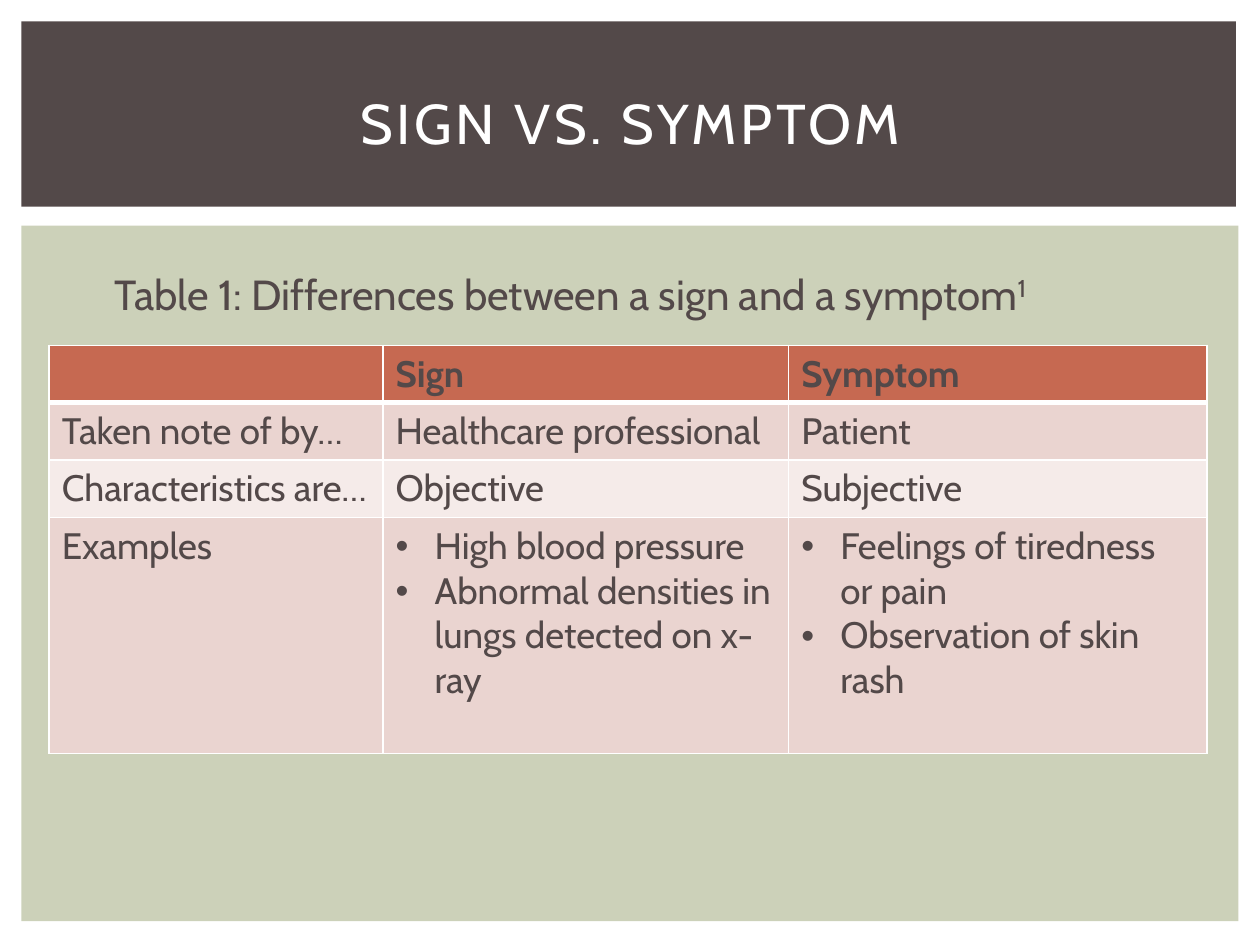
from collections import namedtuple

from lxml.etree import SubElement
from pptx import Presentation
from pptx.dml.color import RGBColor
from pptx.enum.shapes import MSO_SHAPE as Shape
from pptx.enum.text import MSO_ANCHOR as Anchor, PP_ALIGN as Align
from pptx.oxml import parse_xml
from pptx.oxml.ns import nsdecls, qn
from pptx.util import Inches, Pt

WHITE = RGBColor(0xFF, 0xFF, 0xFF)
BROWN = RGBColor(0x53, 0x49, 0x49)
SAGE = RGBColor(0xCC, 0xD1, 0xB9)
RUST = RGBColor(0xC6, 0x69, 0x51)
ROSE = RGBColor(0xEA, 0xD4, 0xD0)
BLUSH = RGBColor(0xF5, 0xEB, 0xE9)

FONT = "Cabin"
SLIDE_WIDTH, SLIDE_HEIGHT = Inches(10), Inches(7.5)
COLUMN, ROW = SLIDE_WIDTH / 100, SLIDE_HEIGHT / 75
BULLET_INDENT = Inches(0.31)

Box = namedtuple("Box", "left top width height")

COMPARISON = [
    ([], ["Sign"], ["Symptom"]),
    (["Taken note of by…"], ["Healthcare professional"], ["Patient"]),
    (["Characteristics are…"], ["Objective"], ["Subjective"]),
    (
        ["Examples"],
        ["High blood pressure", "Abnormal densities in lungs detected on x-ray"],
        ["Feelings of tiredness or pain", "Observation of skin rash"],
    ),
]
ROW_FILLS = [RUST, ROSE, BLUSH, ROSE]
COLUMN_SPANS = [26.5, 32.2, 33.2]
ROW_SPANS = [4.56, 4.56, 4.56, 18.72]


def inside(box, left, top, width, height):
    return Box(box.left + left, box.top + top, width, height)


def emu(box):
    return (
        round(box.left * COLUMN),
        round(box.top * ROW),
        round(box.width * COLUMN),
        round(box.height * ROW),
    )


def write(paragraph, text, size, color=BROWN, bold=False, align=Align.LEFT,
          spacing=None, raised=None):
    paragraph.alignment = align
    run = paragraph.add_run()
    run.text = text
    font = run.font
    font.name, font.size, font.bold = FONT, Pt(size), bold
    font.color.rgb = color
    properties = run._r.get_or_add_rPr()
    if spacing:
        properties.set("spc", str(spacing * 100))
    if raised:
        properties.set("baseline", str(raised * 1000))


def add_bullet(paragraph):
    properties = paragraph._p.get_or_add_pPr()
    properties.set("marL", str(BULLET_INDENT))
    properties.set("indent", str(-BULLET_INDENT))
    SubElement(properties, qn("a:buFont"), typeface="Arial")
    SubElement(properties, qn("a:buChar"), char="•")


def add_borders(cell, bottom, top):
    properties = cell._tc.get_or_add_tcPr()
    widths = {"lnL": 1, "lnR": 1, "lnT": top, "lnB": bottom}
    for position, (side, width) in enumerate(widths.items()):
        properties.insert(position, parse_xml(
            f'<a:{side} {nsdecls("a")} w="{Pt(width)}"><a:solidFill>'
            f'<a:srgbClr val="{WHITE}"/></a:solidFill></a:{side}>'
        ))


def add_panel(slide, box, color):
    panel = slide.shapes.add_shape(Shape.RECTANGLE, *emu(box))
    panel.shadow.inherit = False
    panel.fill.solid()
    panel.fill.fore_color.rgb = color
    panel.line.fill.background()


def add_text_frame(slide, box, anchor=Anchor.TOP):
    frame = slide.shapes.add_textbox(*emu(box)).text_frame
    frame.word_wrap = True
    frame.vertical_anchor = anchor
    return frame


def build_header(slide, box):
    add_panel(slide, box, BROWN)
    title = add_text_frame(slide, inside(box, 2.5, 2.2, 91.7, 11.5), Anchor.MIDDLE)
    write(title.paragraphs[0], "SIGN VS. SYMPTOM", 32, WHITE,
          align=Align.CENTER, spacing=2)


def build_comparison(slide, box):
    left, top, width, height = emu(box)
    table = slide.shapes.add_table(
        len(ROW_SPANS), len(COLUMN_SPANS), left, top, width, height
    ).table
    for column, span in zip(table.columns, COLUMN_SPANS):
        column.width = round(span * COLUMN)
    for index, (row, span) in enumerate(zip(table.rows, ROW_SPANS)):
        row.height = round(span * ROW)
        for cell, lines in zip(row.cells, COMPARISON[index]):
            cell.fill.solid()
            cell.fill.fore_color.rgb = ROW_FILLS[index]
            add_borders(cell, bottom=3 if index == 0 else 1, top=3 if index == 1 else 1)
            frame = cell.text_frame
            for number, line in enumerate(lines):
                paragraph = frame.add_paragraph() if number else frame.paragraphs[0]
                write(paragraph, line, 21, bold=index == 0)
                if len(lines) > 1:
                    add_bullet(paragraph)


def build_body(slide, box):
    add_panel(slide, box, SAGE)
    caption = add_text_frame(slide, inside(box, 6.4, 2.9, 78.5, 5)).paragraphs[0]
    write(caption, "Table 1: Differences between a sign and a symptom", 24)
    write(caption, "1", 24, raised=30)
    build_comparison(slide, inside(box, 2.2, 9.5, sum(COLUMN_SPANS), sum(ROW_SPANS)))


def main():
    deck = Presentation()
    deck.slide_width, deck.slide_height = SLIDE_WIDTH, SLIDE_HEIGHT
    slide = deck.slides.add_slide(deck.slide_layouts[6])
    build_body(slide, Box(1.7, 17.9, 96.6, 55.2))
    build_header(slide, Box(1.7, 1.7, 96.4, 14.7))
    deck.save("out.pptx")


if __name__ == "__main__":
    main()
